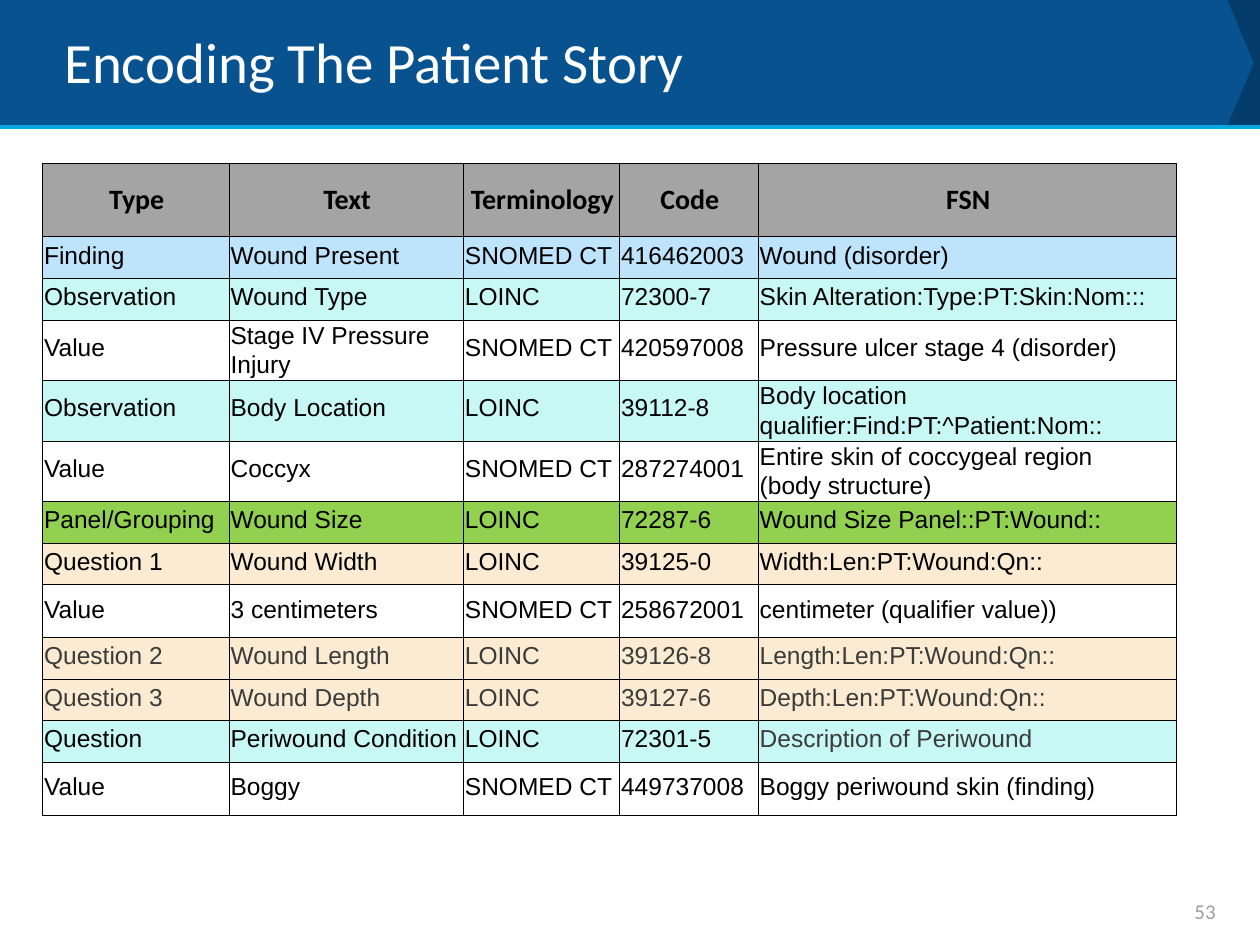
from lxml import etree
from pptx import Presentation
from pptx.dml.color import RGBColor
from pptx.enum.shapes import MSO_CONNECTOR, MSO_SHAPE
from pptx.enum.text import MSO_ANCHOR, PP_ALIGN
from pptx.oxml.ns import qn
from pptx.util import Inches, Pt

RECT, PENTAGON = MSO_SHAPE.RECTANGLE, MSO_SHAPE.PENTAGON
STRAIGHT = MSO_CONNECTOR.STRAIGHT
TOP = MSO_ANCHOR.TOP
LEFT, CENTER = PP_ALIGN.LEFT, PP_ALIGN.CENTER

TITLE = "Encoding The Patient Story"
PAGE = "53"
BLACK, GRAY = "000000", "3B3B3A"
HEADER, BLUE, AQUA, GREEN, SAND = "A4A4A4", "BEE4FC", "C7F8F5", "92D050", "FAEBD2"

COLS = [1.48, 1.86, 1.24, 1.1, 3.32]
HEADS = ["Type", "Text", "Terminology", "Code", "FSN"]
INSETS = {0.58: 0.15, 0.33: 0.04, 0.48: 0.11, 0.42: 0.09}
ROWS = [
    (0.58, HEADER, BLACK, HEADS),
    (0.33, BLUE, BLACK, ["Finding", "Wound Present", "SNOMED CT", "416462003", "Wound (disorder)"]),
    (0.33, AQUA, BLACK, ["Observation", "Wound Type", "LOINC", "72300-7",
                         "Skin Alteration:Type:PT:Skin:Nom:::"]),
    (0.48, None, BLACK, ["Value", "Stage IV Pressure Injury", "SNOMED CT", "420597008",
                         "Pressure ulcer stage 4 (disorder)"]),
    (0.48, AQUA, BLACK, ["Observation", "Body Location", "LOINC", "39112-8",
                         "Body location qualifier:Find:PT:^Patient:Nom::"]),
    (0.48, None, BLACK, ["Value", "Coccyx", "SNOMED CT", "287274001",
                         "Entire skin of coccygeal region\v(body structure)"]),
    (0.33, GREEN, BLACK, ["Panel/Grouping", "Wound Size", "LOINC", "72287-6",
                          "Wound Size Panel::PT:Wound::"]),
    (0.33, SAND, BLACK, ["Question 1", "Wound Width", "LOINC", "39125-0", "Width:Len:PT:Wound:Qn::"]),
    (0.42, None, BLACK, ["Value", "3 centimeters", "SNOMED CT", "258672001",
                         "centimeter (qualifier value))"]),
    (0.33, SAND, GRAY, ["Question 2", "Wound Length", "LOINC", "39126-8", "Length:Len:PT:Wound:Qn::"]),
    (0.33, SAND, GRAY, ["Question 3", "Wound Depth", "LOINC", "39127-6", "Depth:Len:PT:Wound:Qn::"]),
    (0.33, AQUA, BLACK, ["Question", "Periwound Condition", "LOINC", "72301-5",
                         "Description of Periwound"]),
    (0.42, None, BLACK, ["Value", "Boggy", "SNOMED CT", "449737008",
                         "Boggy periwound skin (finding)"]),
]
TWO_LINE = {(3, 1), (4, 4), (5, 4)}
GRAY_CELLS = {(11, 4)}


def rgb(value):
    return RGBColor.from_string(value)


def set_font(p, name, size, color, bold=False):
    p.font.name, p.font.size, p.font.bold = name, Pt(size), bold
    p.font.color.rgb = rgb(color)


def set_margins(item, left, top):
    item.margin_left, item.margin_top = Inches(left), Inches(top)
    item.margin_right = item.margin_bottom = 0


def add_band(s, kind, left, width, color):
    sp = s.shapes.add_shape(kind, Inches(left), 0, Inches(width), Inches(1))
    sp.shadow.inherit = False
    sp.fill.solid()
    sp.fill.fore_color.rgb = rgb(color)
    sp.line.fill.background()
    return sp


def set_borders(cell):
    tcPr = cell._tc.get_or_add_tcPr()
    for i, side in enumerate(("a:lnL", "a:lnR", "a:lnT", "a:lnB")):
        ln = etree.Element(qn(side), w=str(Pt(0.5)))
        fill = etree.SubElement(ln, qn("a:solidFill"))
        etree.SubElement(fill, qn("a:srgbClr"), val=BLACK)
        tcPr.insert(i, ln)


def add_codes(s):
    heights = [row[0] for row in ROWS]
    table = s.shapes.add_table(len(ROWS), len(COLS), Inches(0.34), Inches(1.3),
                               Inches(sum(COLS)), Inches(sum(heights))).table
    table.first_row = table.horz_banding = False
    for column, width in zip(table.columns, COLS):
        column.width = Inches(width)
    for r, (height, fill, color, texts) in enumerate(ROWS):
        table.rows[r].height = Inches(height)
        for c, text in enumerate(texts):
            cell = table.cell(r, c)
            two_line = (r, c) in TWO_LINE
            set_margins(cell, 0.01, 0 if two_line else INSETS[height])
            cell.vertical_anchor = TOP
            if fill:
                cell.fill.solid()
                cell.fill.fore_color.rgb = rgb(fill)
            else:
                cell.fill.background()
            set_borders(cell)
            p = cell.text_frame.paragraphs[0]
            p.text = text
            if r == 0:
                p.alignment = CENTER
                set_font(p, "Calibri", 16, color, True)
            else:
                set_font(p, "Arial", 14, GRAY if (r, c) in GRAY_CELLS else color)
            if two_line:
                p.line_spacing = Pt(16.8)


def main():
    prs = Presentation()
    prs.slide_width, prs.slide_height = Inches(10), Inches(7.5)
    s = prs.slides.add_slide(prs.slide_layouts[5])

    add_band(s, RECT, 9.55, 0.45, "043D6B")
    add_band(s, PENTAGON, 0, 9.95, "07528F").adjustments[0] = 0.21
    rule = s.shapes.add_connector(STRAIGHT, 0, Inches(1.01), Inches(10), Inches(1.01))
    rule.line.color.rgb = rgb("00A8E0")
    rule.line.width = Pt(2.25)
    etree.SubElement(rule._element.spPr, qn("a:effectLst"))

    number = s.shapes.add_textbox(Inches(9.47), Inches(7.12), Inches(0.2), Inches(0.23))
    add_codes(s)
    title = s.shapes.title
    title.left, title.top, title.width, title.height = map(Inches, (0.5, 0.2, 5.2, 0.57))
    s.shapes._spTree.append(title._element)

    for sp, text, size, color in ((number, PAGE, 12, "9E9E9C"), (title, TITLE, 32.5, "FFFFFF")):
        tf = sp.text_frame
        tf.word_wrap = True
        tf.vertical_anchor = TOP
        set_margins(tf, 0.01, 0.01)
        p = tf.paragraphs[0]
        p.text = text
        p.alignment = LEFT
        set_font(p, "Calibri", size, color)

    prs.save("out.pptx")


if __name__ == "__main__":
    main()
